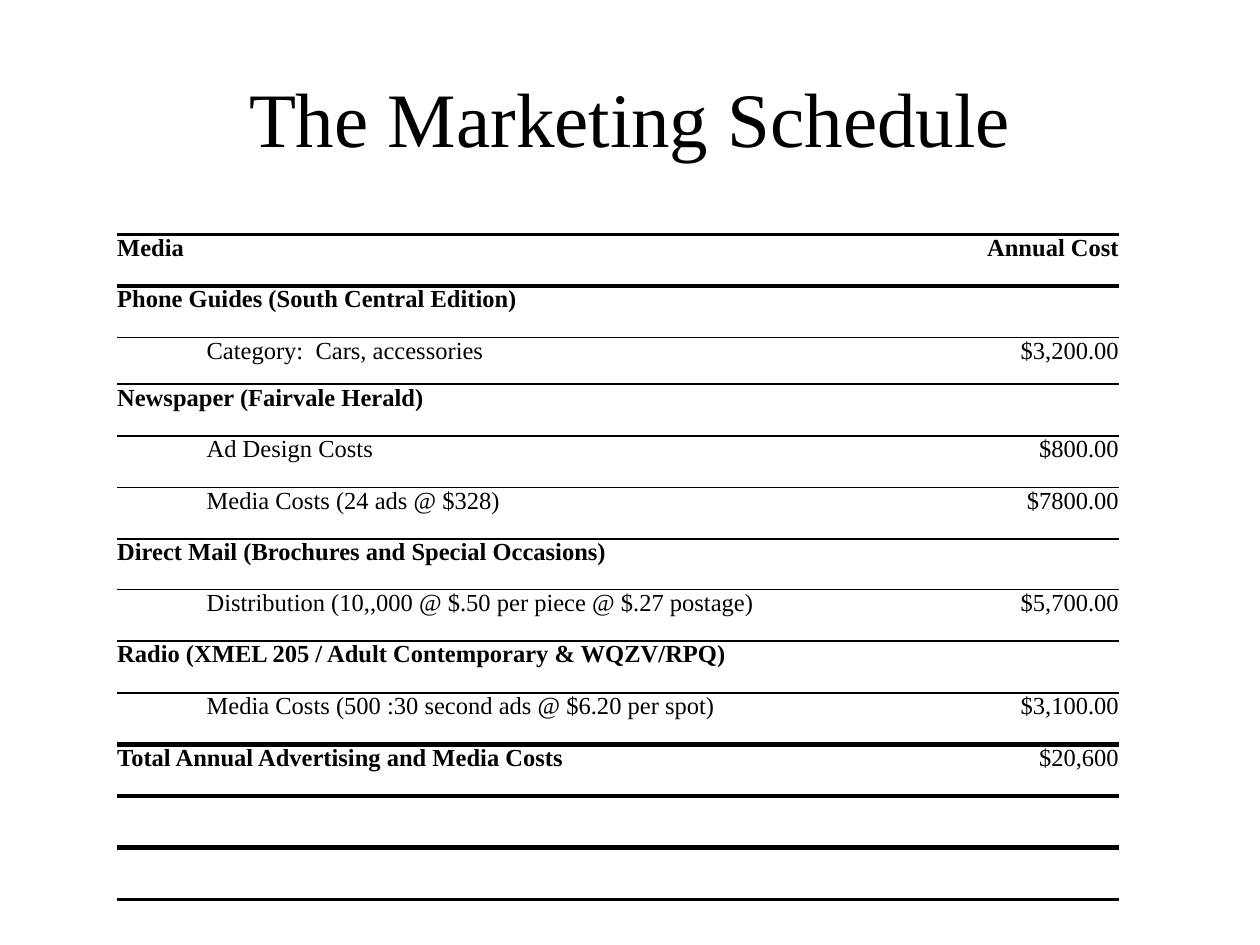
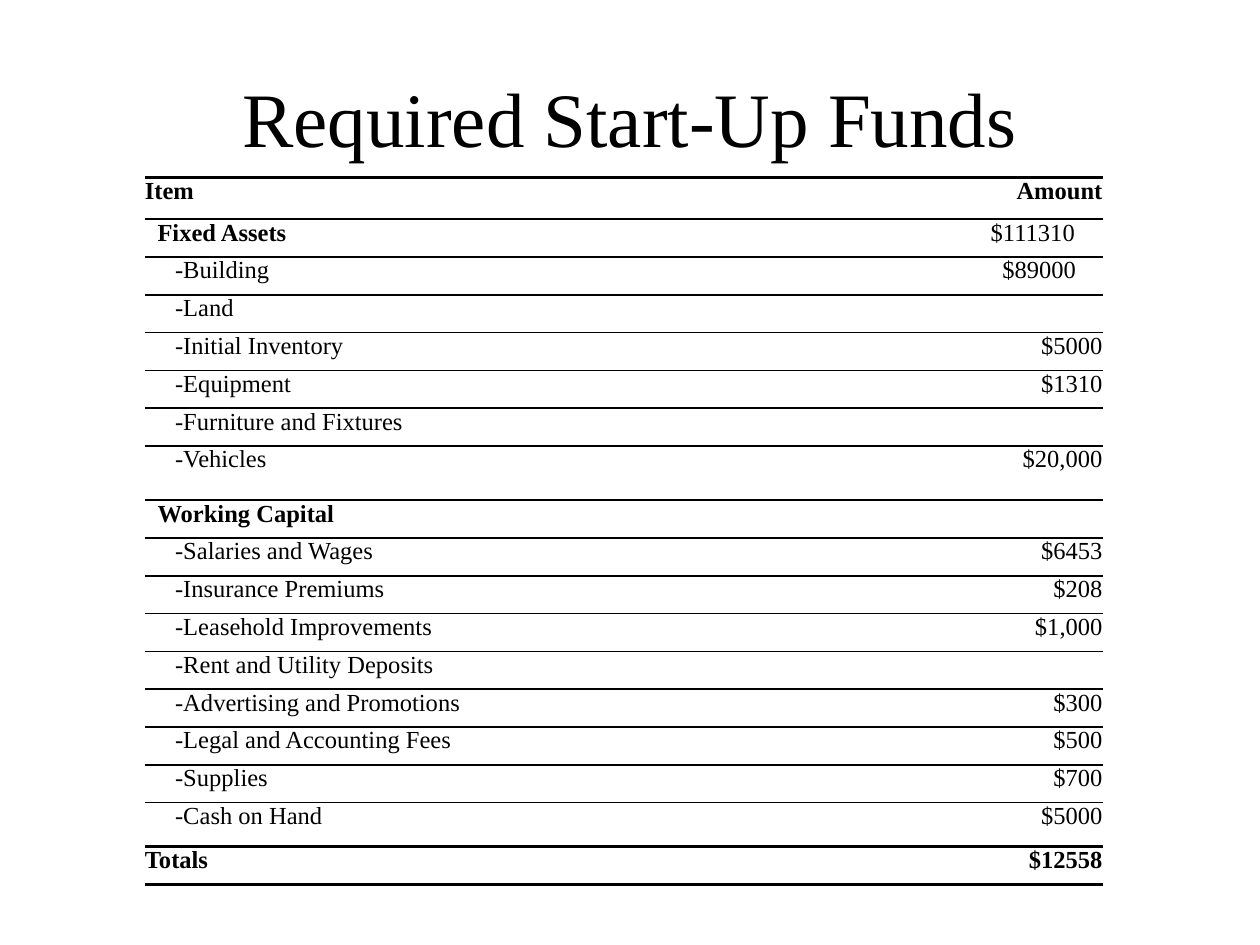
from dataclasses import dataclass
from enum import Enum

from lxml.etree import SubElement
from pptx import Presentation
from pptx.dml.color import RGBColor
from pptx.enum.text import MSO_ANCHOR as Anchor, MSO_AUTO_SIZE as AutoSize, PP_ALIGN as Align
from pptx.oxml.ns import qn
from pptx.util import Inches, Pt

INK = "000000"
FONT = "Times New Roman"
TITLE_SIZE = 44
BODY_SIZE = 14
THIN, MEDIUM, THICK = 1, 2.25, 3


class Level(Enum):
    EDGE = "heading or total"
    SECTION = "section"
    DETAIL = "detail"


@dataclass
class Entry:
    label: str = ""
    amount: str = ""
    level: Level = Level.DETAIL
    rule_below: float = THIN
    height: float = 0.3
    amount_bold: bool = False
    amount_inset: float = 0


@dataclass
class Ledger:
    title: str
    left: float
    top: float
    columns: list[float]
    entries: list[Entry]
    top_rule: float
    section_inset: float = 0
    detail_inset: float = 0


def colour(code):
    return RGBColor.from_string(code)


def style_runs(paragraph, size: float, bold: bool = False) -> None:
    paragraph._p.get_or_add_endParaRPr().set("sz", str(size * 100))
    for run in paragraph.runs:
        run.font.name = FONT
        run.font.size = Pt(size)
        run.font.bold = bold
        run.font.color.rgb = colour(INK)


def add_title(slide, wording: str) -> None:
    title = slide.shapes.title
    title.left, title.top = Inches(0.5), Inches(0.3)
    title.width, title.height = Inches(9), Inches(1.25)
    frame = title.text_frame
    frame.text = wording
    frame.auto_size = AutoSize.NONE
    frame.vertical_anchor = Anchor.MIDDLE
    frame.paragraphs[0].alignment = Align.CENTER
    style_runs(frame.paragraphs[0], TITLE_SIZE)


def rule_cell(cell, above: float, below: float) -> None:
    cell.fill.background()
    properties = cell._tc.get_or_add_tcPr()
    sides = {"a:lnL": 0, "a:lnR": 0, "a:lnT": above, "a:lnB": below}
    for position, (side, width) in enumerate(sides.items()):
        line = SubElement(properties, qn(side), w=str(int(Pt(width))))
        if width:
            fill = SubElement(line, qn("a:solidFill"))
            SubElement(fill, qn("a:srgbClr"), val=INK)
        else:
            SubElement(line, qn("a:noFill"))
        properties.insert(position, line)


def write_cell(cell, wording: str, align, bold: bool) -> None:
    cell.text_frame.text = wording
    paragraph = cell.text_frame.paragraphs[0]
    paragraph.alignment = align
    style_runs(paragraph, BODY_SIZE, bold)


def add_ledger(slide, ledger: Ledger) -> None:
    """Draw a ruled table of labels and right-aligned amounts."""
    entries, last = ledger.entries, len(ledger.columns) - 1
    insets = {Level.EDGE: 0, Level.SECTION: ledger.section_inset, Level.DETAIL: ledger.detail_inset}
    table = slide.shapes.add_table(
        len(entries), last + 1, Inches(ledger.left), Inches(ledger.top),
        Inches(sum(ledger.columns)), Inches(sum(entry.height for entry in entries)),
    ).table
    table.first_row = table.horz_banding = False
    for column, width in zip(table.columns, ledger.columns):
        column.width = Inches(width)
    above = ledger.top_rule
    for index, entry in enumerate(entries):
        table.rows[index].height = Inches(entry.height)
        cells = [table.cell(index, column) for column in range(last + 1)]
        for cell in cells:
            cell.margin_left = cell.margin_right = cell.margin_top = cell.margin_bottom = 0
            write_cell(cell, "", Align.LEFT, False)
            rule_cell(cell, above, entry.rule_below)
        above = entry.rule_below
        is_detail = entry.level is Level.DETAIL
        label_cell = cells[last - 1 if is_detail else 0]
        label_cell.margin_left = Inches(insets[entry.level])
        write_cell(label_cell, entry.label, Align.LEFT, not is_detail)
        cells[last].margin_right = Inches(entry.amount_inset)
        write_cell(cells[last], entry.amount, Align.RIGHT, entry.amount_bold)
        if last > 1 and not is_detail:
            cells[0].merge(cells[last if entry.level is Level.SECTION else last - 1])


def media(label: str = "", amount: str = "", level: Level = Level.DETAIL,
          rule: float = THIN, height: float = 0.41, bold: bool = False) -> Entry:
    return Entry(label, amount, level, rule, height, bold)


MARKETING = Ledger(
    "The Marketing Schedule", 0.93, 1.86, [0.71, 5.3, 1.94],
    [
        media("Media", "Annual Cost", Level.EDGE, THICK, bold=True),
        media("Phone Guides (South Central Edition)", level=Level.SECTION),
        media("Category:  Cars, accessories", "$3,200.00", height=0.37),
        media("Newspaper (Fairvale Herald)", level=Level.SECTION),
        media("Ad Design Costs", "$800.00"),
        media("Media Costs (24 ads @ $328)", "$7800.00"),
        media("Direct Mail (Brochures and Special Occasions)", level=Level.SECTION, height=0.4),
        media("Distribution (10,,000 @ $.50 per piece @ $.27 postage)", "$5,700.00"),
        media("Radio (XMEL 205 / Adult Contemporary & WQZV/RPQ)", level=Level.SECTION),
        media("Media Costs (500 :30 second ads @ $6.20 per spot)", "$3,100.00", rule=THICK),
        media("Total Annual Advertising and Media Costs", "$20,600", Level.EDGE, THICK),
        media(level=Level.EDGE, rule=THICK),
        media(level=Level.EDGE, rule=MEDIUM),
    ],
    top_rule=MEDIUM,
)

FUNDS = Ledger(
    "Required Start-Up Funds", 1.15, 1.41, [3.8, 3.8],
    [
        Entry("Item", "Amount", Level.EDGE, height=0.33, amount_bold=True),
        Entry("Fixed Assets", "$111310", Level.SECTION, amount_inset=0.22),
        Entry("-Building", "$89000", amount_inset=0.21),
        Entry("-Land"),
        Entry("-Initial Inventory", "$5000"),
        Entry("-Equipment", "$1310"),
        Entry("-Furniture and Fixtures"),
        Entry("-Vehicles", "$20,000", height=0.43),
        Entry("Working Capital", level=Level.SECTION),
        Entry("-Salaries and Wages", "$6453"),
        Entry("-Insurance Premiums", "$208"),
        Entry("-Leasehold Improvements", "$1,000"),
        Entry("-Rent and Utility Deposits"),
        Entry("-Advertising and Promotions", "$300"),
        Entry("-Legal and Accounting Fees", "$500"),
        Entry("-Supplies", "$700"),
        Entry("-Cash on Hand", "$5000", rule_below=MEDIUM, height=0.35),
        Entry("Totals", "$12558", Level.EDGE, MEDIUM, amount_bold=True),
    ],
    top_rule=MEDIUM,
    section_inset=0.1,
    detail_inset=0.24,
)


def main() -> None:
    deck = Presentation()
    deck.slide_width, deck.slide_height = Inches(10), Inches(7.5)
    title_only = deck.slide_layouts[5]
    for ledger in (MARKETING, FUNDS):
        slide = deck.slides.add_slide(title_only)
        add_title(slide, ledger.title)
        add_ledger(slide, ledger)
    deck.save("out.pptx")


if __name__ == "__main__":
    main()
